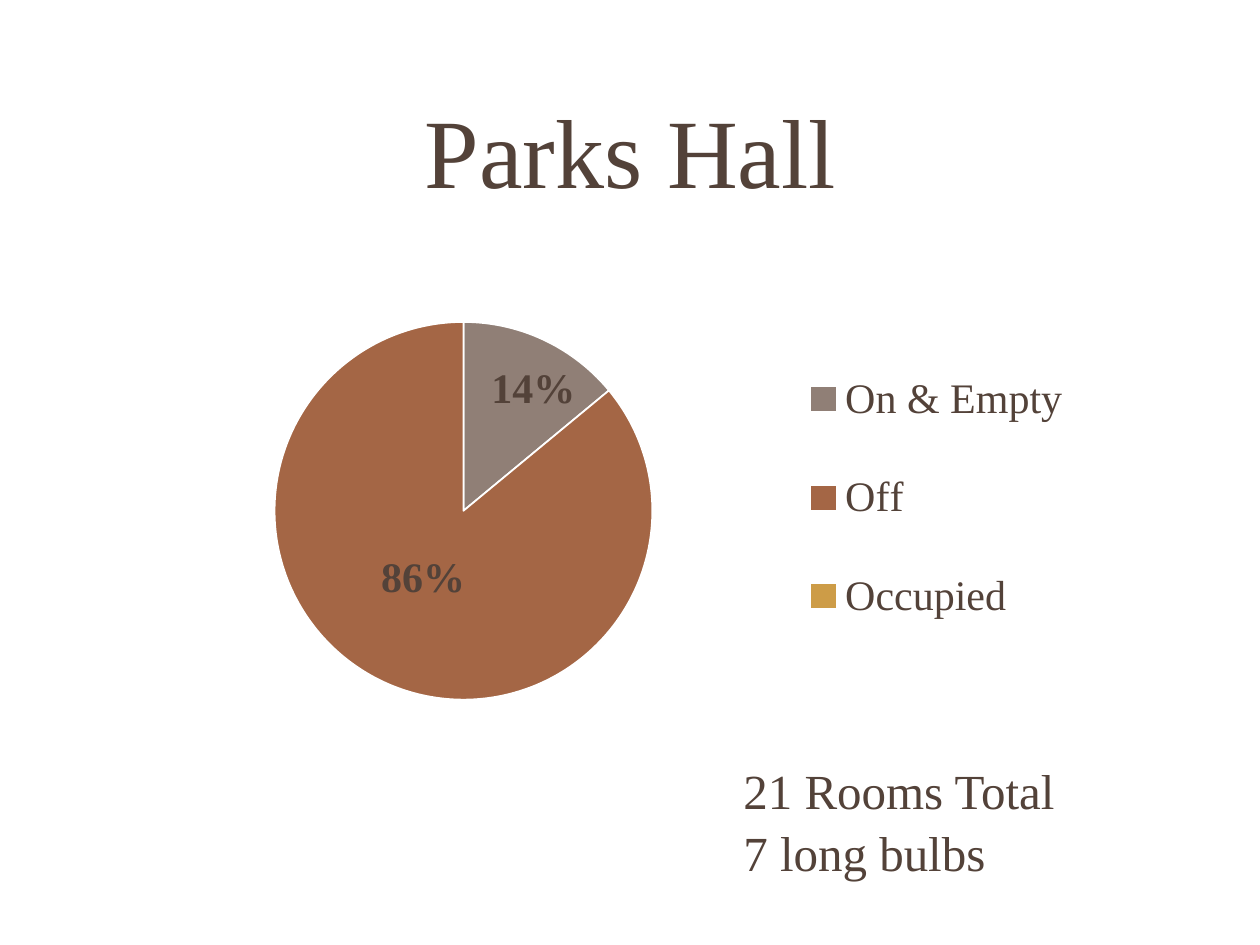
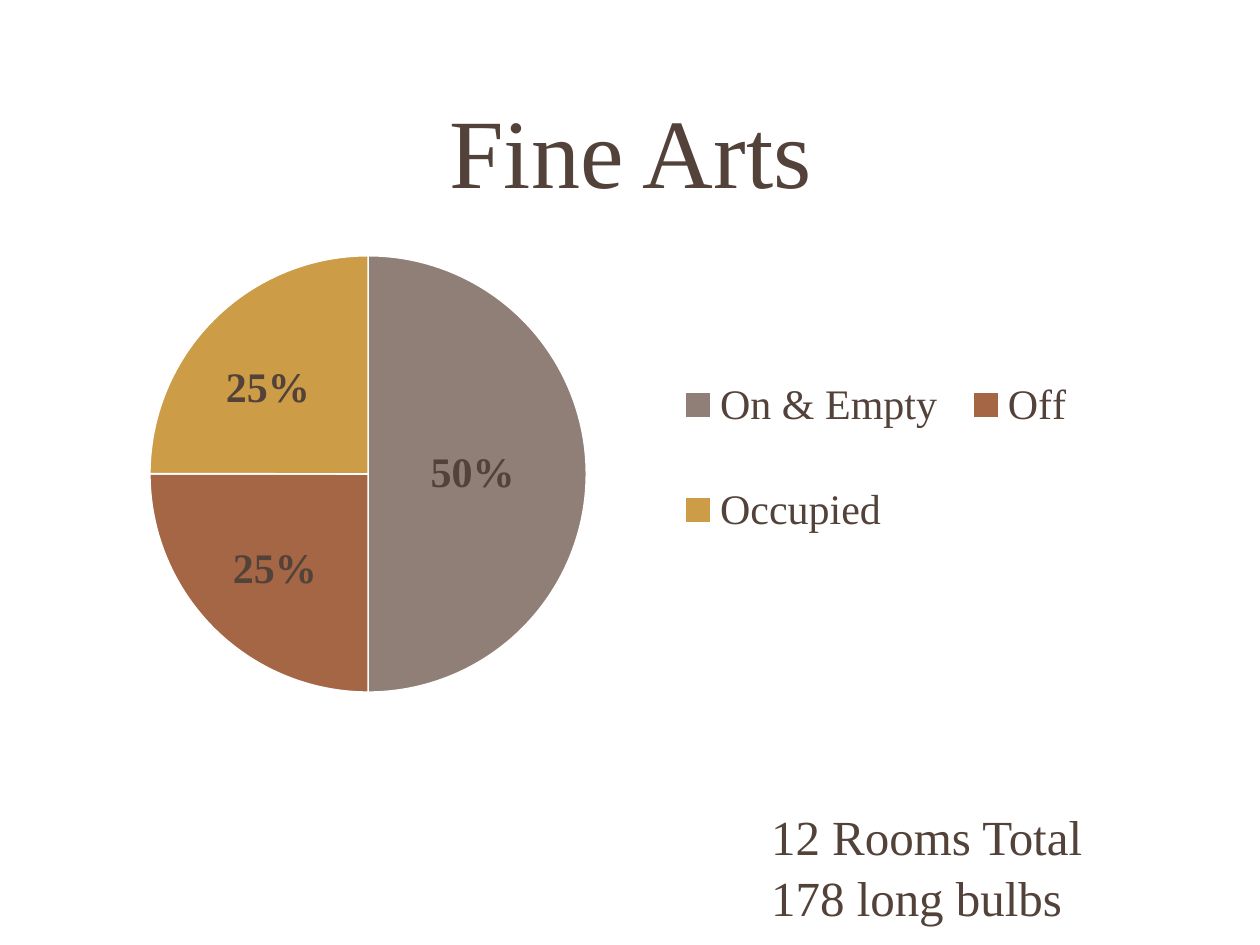
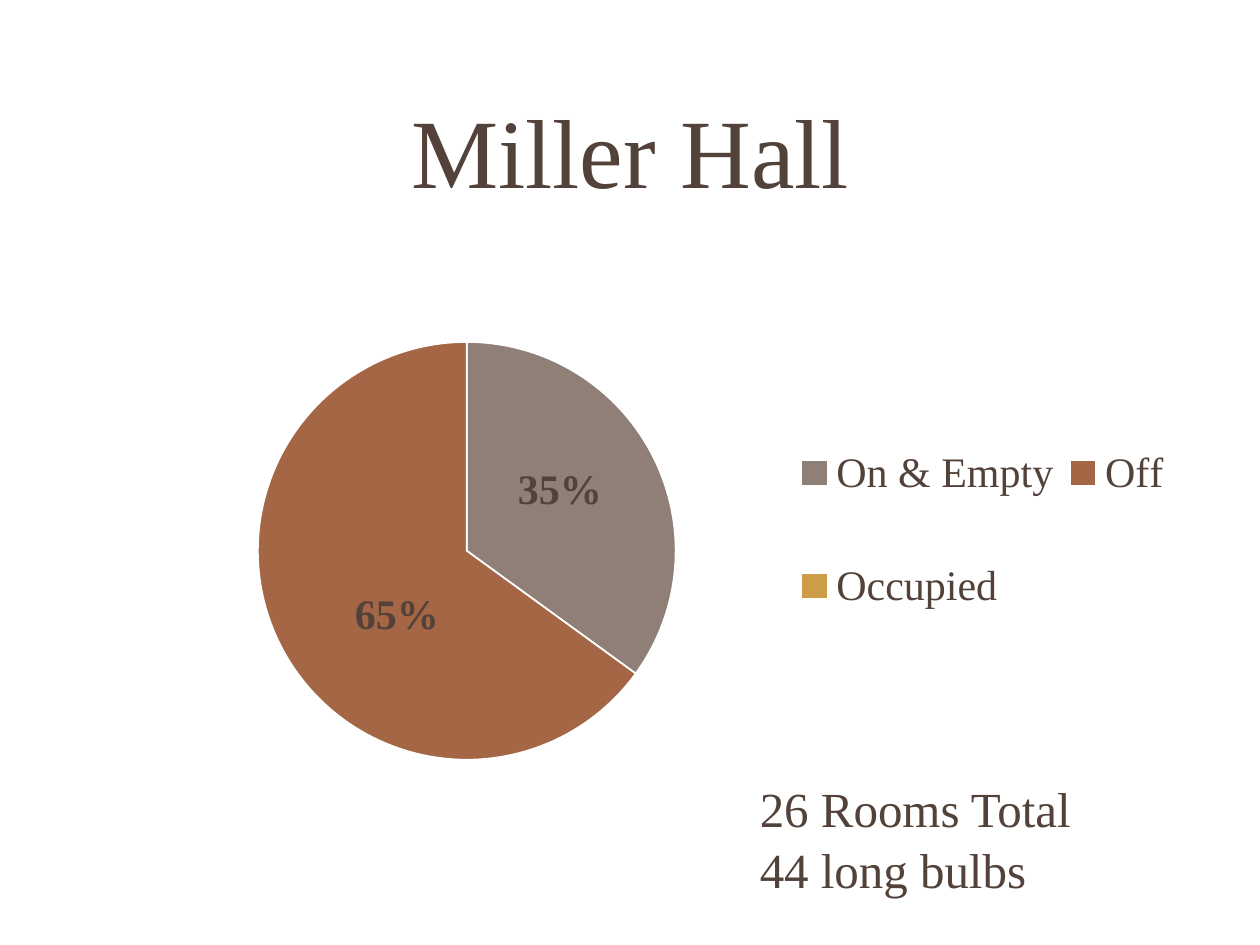
from lxml import etree
from pptx import Presentation
from pptx import util as u
from pptx.chart.data import CategoryChartData
from pptx.dml.color import RGBColor
from pptx.enum import chart as ch, text as tx
from pptx.oxml import parse_xml
from pptx.oxml.ns import nsdecls, qn

# Shared style
FONT, BROWN, WHITE = "Times New Roman", "534239", "FFFFFF"
SLICE_COLOURS = ["907F76", "A46645", "CD9C47"]
CATEGORIES = ["On & Empty", "Off", "Occupied"]
TITLE_BOX = (0.88, 0.42, 8.25, 1.5)

# Boxes are left, top, width, height in inches; nudges move the slice labels
HALLS = [
    dict(title="Parks Hall", notes=["21 Rooms Total", "7 long bulbs"],
         notes_box=(5.8, 5.97, 2.98, 1.04), values=(14, 86, 0),
         chart_box=(1.24, 1.9, 7.89, 4.59), pie_box=(2.18, 2.46, 3.0, 3.19),
         legend_box=(6.22, 2.57, 2.43, 2.76),
         nudges=[(0.24, -0.29), (0, -0.14), None]),
    dict(title="Fine Arts", notes=["12 Rooms Total", "178 long bulbs"],
         notes_box=(6.02, 6.33, 3.1, 1.04), values=(50, 25, 25),
         chart_box=(-0.48, 1.18, 9.12, 4.98), pie_box=(1.19, 2.02, 3.47, 3.48),
         legend_box=(5.27, 2.57, 3.5, 2.12),
         nudges=[(-0.04, -0.01), (-0.13, 0.14), (-0.18, -0.07)]),
    dict(title="Miller Hall", notes=["26 Rooms Total", "44 long bulbs"],
         notes_box=(5.93, 6.11, 2.89, 1.13), values=(35, 65, 0),
         chart_box=(0.62, 1.85, 8.75, 4.87), pie_box=(2.05, 2.71, 3.32, 3.32),
         legend_box=(6.23, 3.05, 3.14, 2.31),
         nudges=[(0, -0.1), (0.18, 0.13), None]),
]


def colour(hex_text):
    return RGBColor.from_string(hex_text)


def set_all(target, **values):
    for name, value in values.items():
        setattr(target, name, value)


def style_font(font, size, bold=False):
    set_all(font, name=FONT, size=u.Pt(size), bold=bold)
    font.color.rgb = colour(BROWN)


def place(shape, box):
    for name, value in zip(("left", "top", "width", "height"), box):
        setattr(shape, name, u.Inches(value))


def manual_layout(**values):
    parts = "".join(f'<c:{name} val="{value}"/>' for name, value in values.items())
    return parse_xml(f'<c:layout {nsdecls("c")}><c:manualLayout>{parts}'
                     '</c:manualLayout></c:layout>')


def set_layout(parent, layout, after=None):
    """Give a chart part a manual layout, as first child or after a named one."""
    for old in parent.findall(qn("c:layout")):
        parent.remove(old)
    parent.insert(0 if after is None else parent.index(parent.find(qn(after))) + 1, layout)


def share_of(box, outer):
    """Express a slide box as shares of the chart that holds it."""
    left, top, width, height = outer
    return dict(xMode="edge", yMode="edge",
                x=round((box[0] - left) / width, 3), y=round((box[1] - top) / height, 3),
                w=round(box[2] / width, 3), h=round(box[3] / height, 3))


def add_text(shape, box, lines, size, align, anchor):
    place(shape, box)
    frame = shape.text_frame
    set_all(frame, text="\n".join(lines), word_wrap=True, vertical_anchor=anchor,
            auto_size=tx.MSO_AUTO_SIZE.NONE)
    for para in frame.paragraphs:
        props = para._p.get_or_add_pPr()
        set_all(para, alignment=align, space_before=u.Pt(0), line_spacing=1.04)
        props.set("marL", "0")
        props.set("indent", "0")
        etree.SubElement(props, qn("a:buNone"))
        style_font(para.runs[0].font, size)


def label_slice(point, nudge, chart_box):
    label = point.data_label
    style_font(label.font, 24, bold=True)
    label.position = ch.XL_LABEL_POSITION.CENTER
    node = point._element.xpath(f"c:dLbls/c:dLbl[c:idx/@val='{point._idx}']")[0]
    if nudge is None:  # an empty slice has no label
        for child in list(node)[1:]:
            node.remove(child)
        etree.SubElement(node, qn("c:delete")).set("val", "1")
        return
    node.find(qn("c:showVal")).set("val", "0")
    node.find(qn("c:showPercent")).set("val", "1")
    x, y = (round(move / size, 3) for move, size in zip(nudge, chart_box[2:]))
    set_layout(node, manual_layout(x=x, y=y), after="c:idx")


def add_pie(page, hall):
    data = CategoryChartData()
    data.categories = CATEGORIES
    data.add_series("Series 1", hall["values"])
    box = hall["chart_box"]
    chart = page.shapes.add_chart(ch.XL_CHART_TYPE.PIE, *map(u.Inches, box), data).chart
    style_font(chart.font, 18)
    set_all(chart, has_title=False, has_legend=True)
    plot = chart.plots[0]
    plot.vary_by_categories = True

    # Legend and pie positions
    legend = chart.legend
    set_all(legend, position=ch.XL_LEGEND_POSITION.TOP, include_in_layout=False)
    style_font(legend.font, 24)
    set_layout(legend._element, manual_layout(**share_of(hall["legend_box"], box)),
               after="c:legendPos")
    plot_area = chart._chartSpace.find(".//" + qn("c:plotArea"))
    set_layout(plot_area, manual_layout(layoutTarget="inner",
                                        **share_of(hall["pie_box"], box)))

    # Slices and labels
    series = plot.series[0]
    set_all(series.data_labels, show_percentage=True, show_value=False)
    style_font(series.data_labels.font, 24, bold=True)
    for index, (fill, nudge) in enumerate(zip(SLICE_COLOURS, hall["nudges"])):
        point = series.points[index]
        point.format.fill.solid()
        point.format.fill.fore_color.rgb = colour(fill)
        point.format.line.color.rgb = colour(WHITE)
        point.format.line.width = u.Pt(1)
        label_slice(point, nudge, box)


def main():
    deck = Presentation()
    set_all(deck, slide_width=u.Inches(10), slide_height=u.Inches(7.5))
    for hall in HALLS:
        page = deck.slides.add_slide(deck.slide_layouts[1])
        add_text(page.shapes.title, TITLE_BOX, [hall["title"]], 56,
                 tx.PP_ALIGN.CENTER, tx.MSO_ANCHOR.MIDDLE)
        add_text(page.placeholders[1], hall["notes_box"], hall["notes"], 28,
                 tx.PP_ALIGN.LEFT, tx.MSO_ANCHOR.TOP)
        add_pie(page, hall)
    deck.save("out.pptx")


if __name__ == "__main__":
    main()
